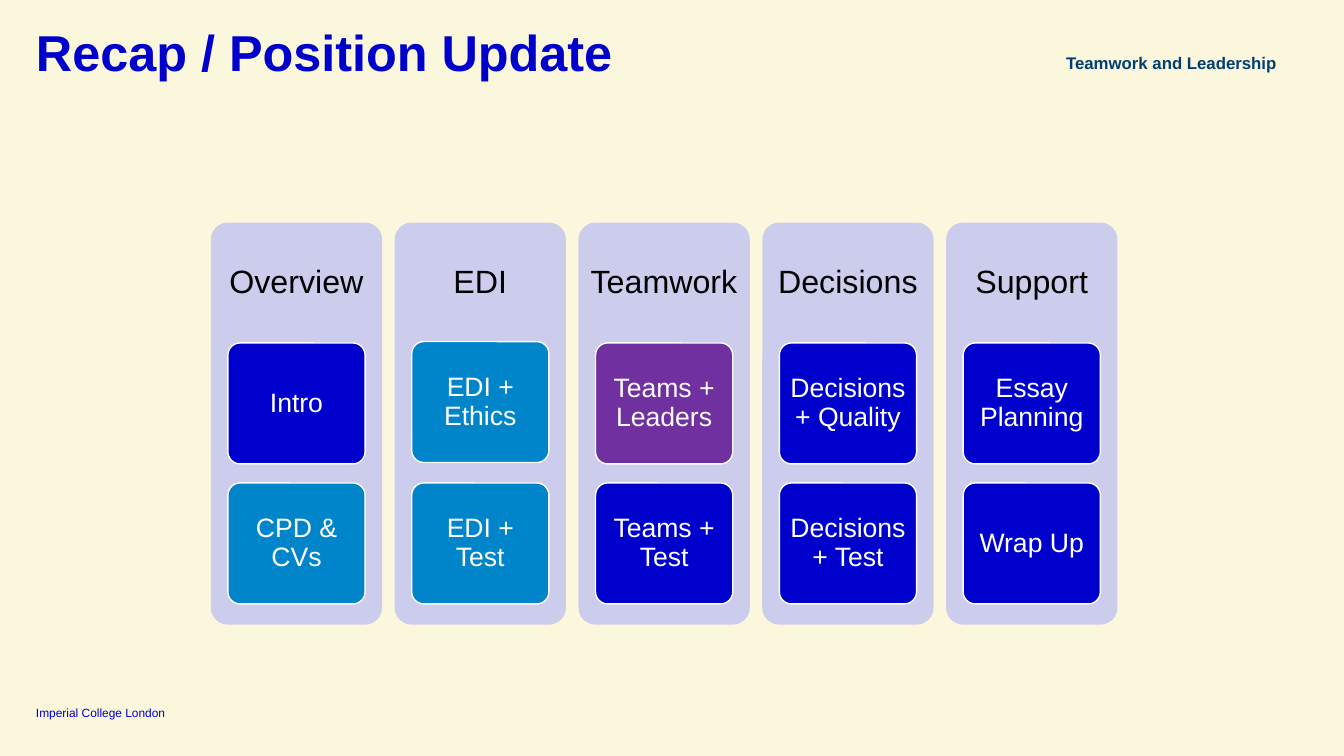
from dataclasses import dataclass

from pptx import Presentation
from pptx.dml.color import RGBColor
from pptx.enum.shapes import MSO_SHAPE
from pptx.enum.text import MSO_ANCHOR, PP_ALIGN
from pptx.util import Pt

ROUNDED = MSO_SHAPE.ROUNDED_RECTANGLE
TOP, MIDDLE, BOTTOM = MSO_ANCHOR.TOP, MSO_ANCHOR.MIDDLE, MSO_ANCHOR.BOTTOM
LEFT, CENTER, RIGHT = PP_ALIGN.LEFT, PP_ALIGN.CENTER, PP_ALIGN.RIGHT


@dataclass(frozen=True)
class Theme:
    font: str = "Arial"
    background: str = "FBF7DC"
    column: str = "CCCCED"
    blue: str = "0000CD"
    sky: str = "0085CA"
    purple: str = "7030A0"
    navy: str = "003E74"
    black: str = "000000"
    white: str = "FFFFFF"
    title_size: float = 36
    heading_size: float = 23
    card_size: float = 19
    course_size: float = 12
    footer_size: float = 8.5


THEME = Theme()

COLUMNS = [
    ("Overview", [("Intro", THEME.blue), ("CPD & CVs", THEME.sky)]),
    ("EDI", [("EDI + Ethics", THEME.sky), ("EDI + Test", THEME.sky)]),
    ("Teamwork", [("Teams + Leaders", THEME.purple), ("Teams + Test", THEME.blue)]),
    ("Decisions", [("Decisions + Quality", THEME.blue), ("Decisions + Test", THEME.blue)]),
    ("Support", [("Essay Planning", THEME.blue), ("Wrap Up", THEME.blue)]),
]

COLUMN_LEFT, COLUMN_TOP = 150.6, 159
COLUMN_WIDTH, COLUMN_HEIGHT, COLUMN_PITCH = 122.4, 287.2, 131.3
HEADING_HEIGHT = 86.4
CARD_WIDTH, CARD_HEIGHT, CARD_PITCH = 98, 86.4, 100
CARD_TOP = 245
CARD_INSET = (COLUMN_WIDTH - CARD_WIDTH) / 2
RAISED_CARD, RAISED_BY = "EDI + Ethics", 1


def write(shape, text, size, color, align=CENTER, anchor=MIDDLE, bold=False,
          spacing=0.9, margins=(0, 0)):
    """Fill a shape with one paragraph; margins are horizontal, vertical."""
    frame = shape.text_frame
    frame.word_wrap = True
    frame.vertical_anchor = anchor
    frame.margin_left = frame.margin_right = Pt(margins[0])
    frame.margin_top = frame.margin_bottom = Pt(margins[1])
    para = frame.paragraphs[0]
    para.alignment = align
    para.line_spacing = spacing
    span = para.add_run()
    span.text = text
    span.font.name = THEME.font
    span.font.size = Pt(size)
    span.font.bold = bold
    span.font.color.rgb = RGBColor.from_string(color)


def add_label(page, left, top, width, height, text, size, color, **style):
    box = page.shapes.add_textbox(Pt(left), Pt(top), Pt(width), Pt(height))
    write(box, text, size, color, **style)


def add_panel(page, left, top, width, height, fill, outline=None):
    panel = page.shapes.add_shape(ROUNDED, Pt(left), Pt(top), Pt(width), Pt(height))
    panel.adjustments[0] = 0.1
    panel.shadow.inherit = False
    panel.fill.solid()
    panel.fill.fore_color.rgb = RGBColor.from_string(fill)
    if outline:
        panel.line.color.rgb = RGBColor.from_string(outline)
        panel.line.width = Pt(1)
    else:
        panel.line.fill.background()
    return panel


def add_column(page, left, heading, cards):
    add_panel(page, left, COLUMN_TOP, COLUMN_WIDTH, COLUMN_HEIGHT, THEME.column)
    add_label(page, left, COLUMN_TOP, COLUMN_WIDTH, HEADING_HEIGHT, heading,
              THEME.heading_size, THEME.black, margins=(7.2, 7.2))
    for row, (text, fill) in enumerate(cards):
        top = CARD_TOP + row * CARD_PITCH
        if text == RAISED_CARD:
            top -= RAISED_BY
        card = add_panel(page, left + CARD_INSET, top, CARD_WIDTH, CARD_HEIGHT,
                         fill, THEME.white)
        write(card, text, THEME.card_size, THEME.white, margins=(3.6, 2.8))


def main():
    deck = Presentation()
    deck.slide_width, deck.slide_height = Pt(960), Pt(540)
    page = deck.slides.add_slide(deck.slide_layouts[6])
    page.background.fill.solid()
    page.background.fill.fore_color.rgb = RGBColor.from_string(THEME.background)

    add_label(page, 25.7, 503.5, 111.6, 10.8, "Imperial College London",
              THEME.footer_size, THEME.blue, align=LEFT, anchor=BOTTOM, spacing=1.0)
    for index, (heading, cards) in enumerate(COLUMNS):
        add_column(page, COLUMN_LEFT + index * COLUMN_PITCH, heading, cards)
    add_label(page, 25.7, 20, 908.6, 29.5, "Recap / Position Update",
              THEME.title_size, THEME.blue, align=LEFT, anchor=TOP, bold=True)
    add_label(page, 666, 36.8, 246, 24.5, "Teamwork and Leadership",
              THEME.course_size, THEME.navy, align=RIGHT, anchor=TOP, bold=True,
              spacing=1.05)
    deck.save("out.pptx")


if __name__ == "__main__":
    main()
